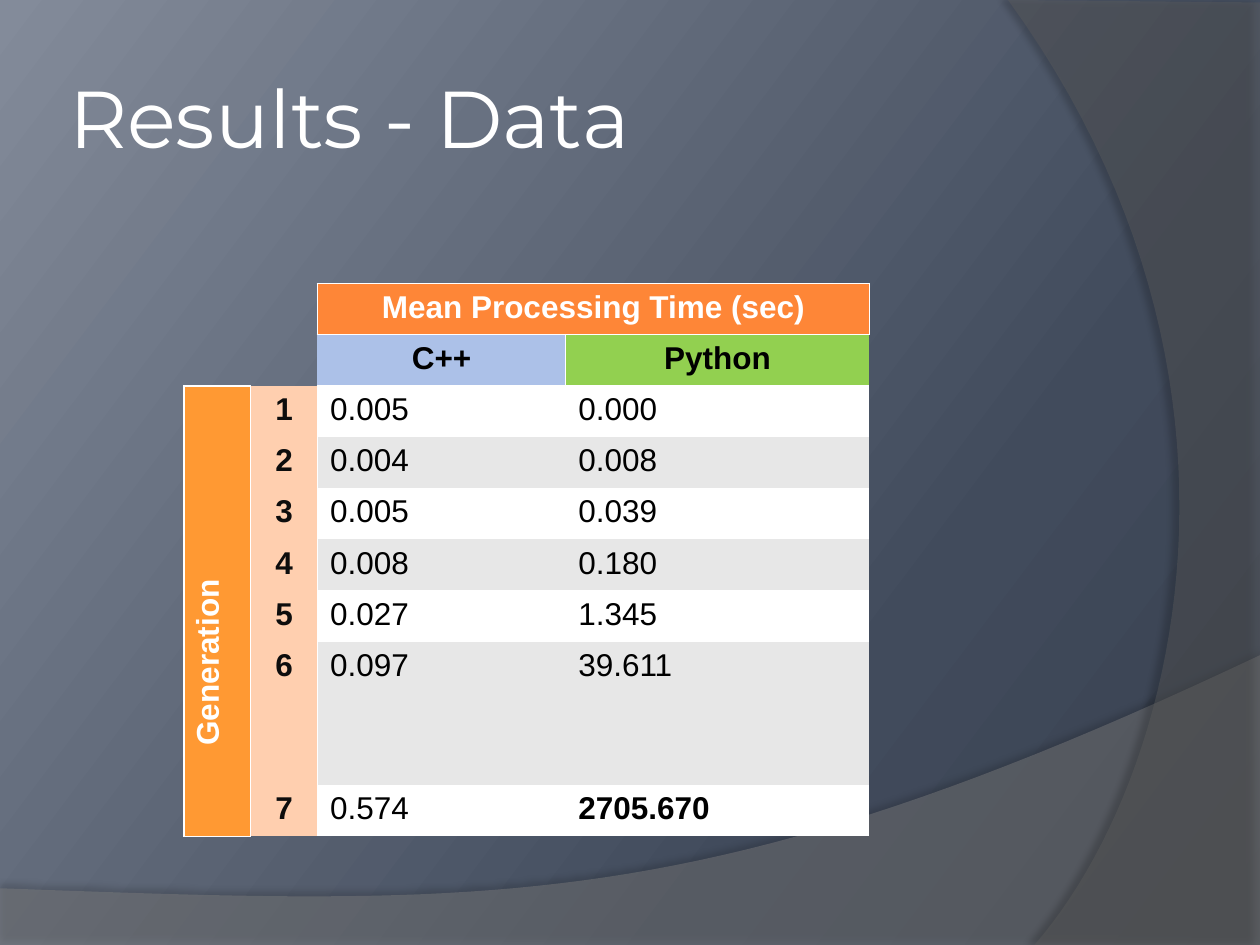
"""Builds the slide with the mean processing times per generation."""
from dataclasses import dataclass
from lxml.etree import SubElement
from pptx import Presentation
from pptx.dml.color import RGBColor as RGB
from pptx.enum.text import MSO_ANCHOR as ANCHOR, MSO_AUTO_SIZE as AUTO, PP_ALIGN as ALIGN
from pptx.oxml import parse_xml
from pptx.oxml.ns import nsdecls, qn
from pptx.util import Inches, Pt


@dataclass(frozen=True)
class Theme:
    title_font: str = "Montserrat"
    body_font: str = "Arial"
    title_size: int = 46
    body_size: int = 18
    white: str = "FFFFFF"
    black: str = "000000"
    number: str = "0D0D0D"
    header: str = "FE8637"
    cpp: str = "ACC1E8"
    python: str = "92D050"
    side: str = "FF9933"
    side_light: str = "FFCFAF"
    band: str = "E7E7E7"
    wave: str = "7F7F7F"
    arc: str = "5E5E5E"
    backdrop: tuple = ((0, "373F4D"), (30, "414B5C"), (100, "838B9A"))
    plain_table: str = "{2D5ABB26-0587-4C30-8999-92F81FD0307C}"


def bezier(a, b, c, d, steps=48):
    """Return points along a cubic curve."""
    return [tuple((1 - t) ** 3 * p + 3 * (1 - t) ** 2 * t * q
                  + 3 * (1 - t) * t ** 2 * r + t ** 3 * w
                  for p, q, r, w in zip(a, b, c, d))
            for t in (i / steps for i in range(steps + 1))]


class Deck:
    """Holds the style and the current slide, on a grid of 100 columns by 75 rows."""

    def __init__(self, theme):
        self.theme = theme
        self.prs = Presentation()
        self.prs.slide_width, self.prs.slide_height = Inches(10), Inches(7.5)
        self.s = self.prs.slides.add_slide(self.prs.slide_layouts[5])

    def units(self, *values):
        return [Inches(v / 10) for v in values]

    def run(self, p, text, font, size, color, bold=False):
        r = p.add_run()
        r.text = text
        r.font.name, r.font.size, r.font.bold = font, Pt(size), bold
        r.font.color.rgb = RGB.from_string(color)

    def background(self, angle):
        self.s.background.fill.solid()
        bg_pr = self.s._element.cSld.find(qn("p:bg")).find(qn("p:bgPr"))
        stops = "".join(f'<a:gs pos="{pos * 1000}"><a:srgbClr val="{color}"/></a:gs>'
                        for pos, color in self.theme.backdrop)
        bg_pr.replace(bg_pr[0], parse_xml(
            f'<a:gradFill {nsdecls("a")} rotWithShape="1"><a:gsLst>{stops}</a:gsLst>'
            f'<a:lin ang="{angle * 60000}" scaled="0"/></a:gradFill>'))

    def title(self, text, *box):
        sp = self.s.shapes.title
        sp.left, sp.top, sp.width, sp.height = self.units(*box)
        tf = sp.text_frame
        tf.word_wrap, tf.auto_size, tf.vertical_anchor = True, AUTO.NONE, ANCHOR.MIDDLE
        tf.margin_left = tf.margin_right = tf.margin_top = tf.margin_bottom = Inches(0.05)
        p = tf.paragraphs[0]
        p.alignment = ALIGN.LEFT
        self.run(p, text, self.theme.title_font, self.theme.title_size, self.theme.white)
        self.s.shapes._spTree.append(sp._element)

    def swoosh(self, points, color, opacity, shade, distance, angle):
        points = [self.units(*point) for point in points]
        builder = self.s.shapes.build_freeform(*points[0])
        builder.add_line_segments(points[1:])
        sp = builder.convert_to_shape()
        sp.fill.solid()
        sp.fill.fore_color.rgb = RGB.from_string(color)
        sp.line.fill.background()
        clr = sp._element.spPr.find(qn("a:solidFill"))[0]
        SubElement(clr, qn("a:alpha")).set("val", str(opacity * 1000))
        sp._element.spPr.append(parse_xml(
            f'<a:effectLst {nsdecls("a")}><a:outerShdw blurRad="{Pt(4)}" '
            f'dist="{Pt(distance)}" dir="{angle * 60000}" algn="ctr" rotWithShape="0">'
            f'<a:srgbClr val="000000"><a:alpha val="{shade * 1000}"/></a:srgbClr>'
            '</a:outerShdw></a:effectLst>'))

    def table(self, left, top, widths, heights):
        x, y, w, h = self.units(left, top, sum(widths), sum(heights))
        frame = self.s.shapes.add_table(len(heights), len(widths), x, y, w, h)
        table = frame.table
        table.first_row = table.horz_banding = False
        table._tbl.tblPr.find(qn("a:tableStyleId")).text = self.theme.plain_table
        for column, width in zip(table.columns, self.units(*widths)):
            column.width = width
        for row, height in zip(table.rows, self.units(*heights)):
            row.height = height
        return table

    def cell(self, cell, text, fill, color, bold=False, align=ALIGN.CENTER, sides=""):
        cell.fill.solid()
        cell.fill.fore_color.rgb = RGB.from_string(fill)
        p = cell.text_frame.paragraphs[0]
        p.alignment = align
        self.run(p, text, self.theme.body_font, self.theme.body_size, color, bold)
        for i, side in enumerate(sides):
            cell._tc.tcPr.insert(i, parse_xml(
                f'<a:ln{side} {nsdecls("a")} w="{Pt(1)}"><a:solidFill>'
                f'<a:srgbClr val="{self.theme.white}"/></a:solidFill></a:ln{side}>'))

    def vertical(self, cell, indent):
        cell._tc.tcPr.set("vert", "vert270")
        cell.text_frame.paragraphs[0]._p.get_or_add_pPr().set("marL", str(Inches(indent)))


def main():
    th = Theme()
    deck = Deck(th)
    deck.background(217)
    wave = [(0, 70.5), (0, 75.1), (100, 75.1)]
    wave += bezier((100, 52), (55.9, 72.9), (39.1, 71.9), (0, 70.5))
    arc = [(100, 0.2), (100, 75)]
    arc += bezier((82.1, 75), (93.5, 61.9), (101.8, 30), (80, 0)) + [(100, 0.2)]
    deck.swoosh(wave, th.wave, 45, 35, 3.5, 270)
    deck.swoosh(arc, th.arc, 40, 45, 4, 180)
    deck.title("Results - Data", 5, 3, 81.7, 12.5)

    times = [("0.005", "0.000"), ("0.004", "0.008"), ("0.005", "0.039"),
             ("0.008", "0.180"), ("0.027", "1.345"), ("0.097", "39.611"),
             ("0.574", "2705.670")]
    last = len(times)
    table = deck.table(14.6, 22.5, [5.3, 5.3, 19.7, 24.1], [4.06] * 7 + [11.4, 4.06])
    table.cell(0, 2).merge(table.cell(0, 3))
    table.cell(2, 0).merge(table.cell(last + 1, 0))
    deck.cell(table.cell(0, 2), "Mean Processing Time (sec)", th.header, th.white, True,
              sides="LRTB")
    deck.cell(table.cell(1, 2), "C++", th.cpp, th.black, True, sides="RT")
    deck.cell(table.cell(1, 3), "Python", th.python, th.black, True, sides="LT")
    deck.cell(table.cell(2, 0), "Generation", th.side, th.white, True, ALIGN.LEFT, "LRTB")
    deck.vertical(table.cell(2, 0), 0.62)
    for n, pair in enumerate(times, 1):
        deck.cell(table.cell(n + 1, 1), str(n), th.side_light, th.number, True,
                  sides="L" if n < last else "")
        for col, value in enumerate(pair, 2):
            deck.cell(table.cell(n + 1, col), value, th.white if n % 2 else th.band,
                      th.black, (n, col) == (last, 3), ALIGN.LEFT)
    deck.prs.save("out.pptx")


if __name__ == "__main__":
    main()
